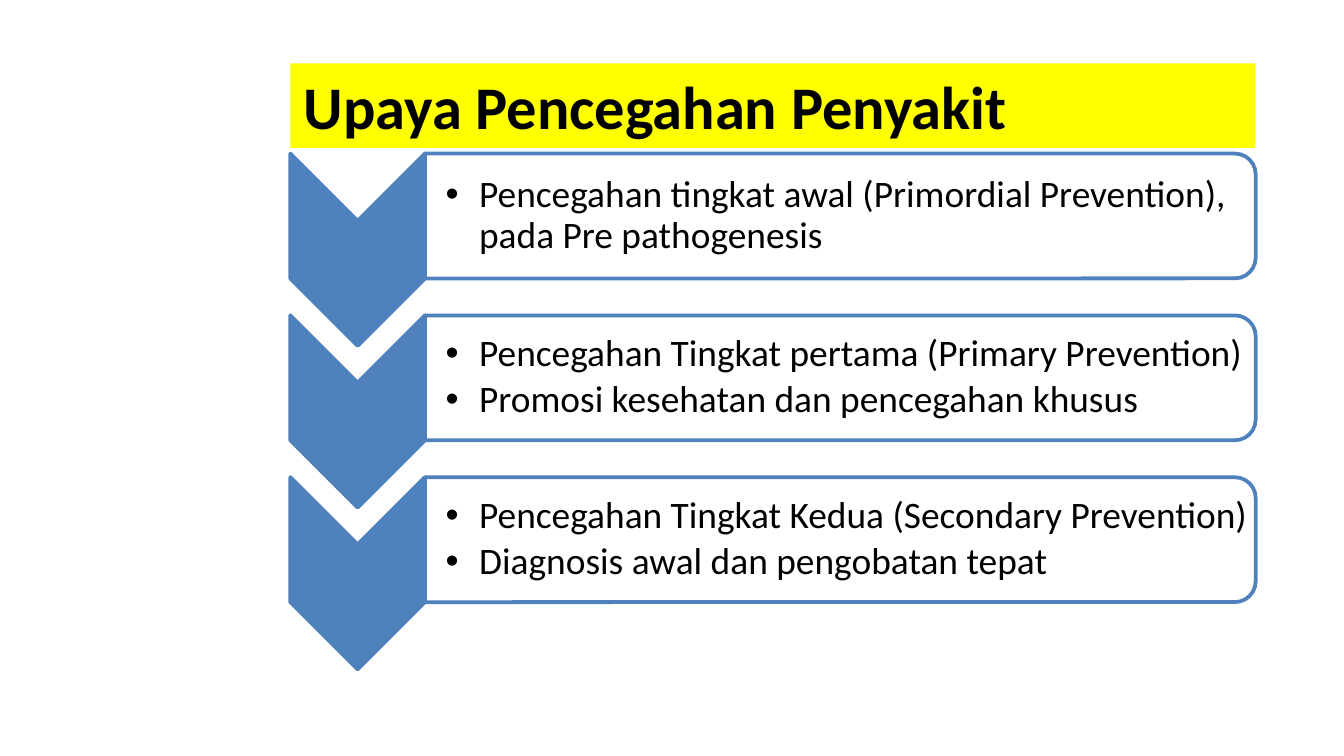
from dataclasses import dataclass

from lxml import etree
from pptx import Presentation
from pptx.dml.color import RGBColor
from pptx.enum.shapes import MSO_SHAPE
from pptx.enum.text import MSO_ANCHOR, MSO_AUTO_SIZE, PP_ALIGN
from pptx.oxml.ns import qn
from pptx.util import Pt

CHEVRON = MSO_SHAPE.CHEVRON
PANEL = MSO_SHAPE.ROUND_2_SAME_RECTANGLE
MIDDLE = MSO_ANCHOR.MIDDLE
LEFT = PP_ALIGN.LEFT
NO_AUTOFIT = MSO_AUTO_SIZE.NONE

COLORS = {"blue": "4F81BD", "white": "FFFFFF", "yellow": "FFFF00", "black": "000000"}
FONT = "Calibri"
FIRST_CENTER = 115.75
STEP_PITCH = 86.7
CHEVRON_DROP = 18


@dataclass
class Step:
    points: list[str]


STEPS = [
    Step(["Pencegahan tingkat awal (Primordial Prevention), pada Pre pathogenesis"]),
    Step(["Pencegahan Tingkat pertama (Primary Prevention)",
          "Promosi kesehatan dan pencegahan khusus"]),
    Step(["Pencegahan Tingkat Kedua (Secondary Prevention)",
          "Diagnosis awal dan pengobatan tepat"]),
]


def color(name: str) -> RGBColor:
    return RGBColor.from_string(COLORS[name])


def style_span(span, size: float, bold: bool = False) -> None:
    span.font.name = FONT
    span.font.size = Pt(size)
    span.font.bold = bold
    span.font.color.rgb = color("black")


def add_turned_shape(slide, kind, center_x: float, center_y: float,
                     width: float, height: float, fill: str):
    """Add a shape turned by 90 degrees; width and height are before the turn."""
    shape = slide.shapes.add_shape(kind, Pt(center_x - width / 2), Pt(center_y - height / 2),
                                   Pt(width), Pt(height))
    shape.rotation = 90
    shape.shadow.inherit = False
    shape.fill.solid()
    shape.fill.fore_color.rgb = color(fill)
    shape.line.color.rgb = color("blue")
    shape.line.width = Pt(2)
    return shape


def set_opacity(shape, percent: int) -> None:
    fill_color = shape.fill._xPr.find(qn("a:solidFill"))[0]
    etree.SubElement(fill_color, qn("a:alpha"), val=str(percent * 1000))


def add_bullet(para) -> None:
    properties = para._p.get_or_add_pPr()
    properties.set("marL", str(Pt(18)))
    properties.set("indent", str(Pt(-18)))
    etree.SubElement(properties, qn("a:buFont"), typeface="Arial")
    etree.SubElement(properties, qn("a:buChar"), char="•")


def add_points(slide, points: list[str], center_y: float) -> None:
    height = 59.8
    box = slide.shapes.add_textbox(Pt(227.5), Pt(center_y - height / 2), Pt(442.2), Pt(height))
    frame = box.text_frame
    frame.word_wrap = True
    frame.auto_size = NO_AUTOFIT
    frame.vertical_anchor = MIDDLE
    frame.margin_left = Pt(11.2)
    frame.margin_top = frame.margin_right = frame.margin_bottom = Pt(0.9)
    frame.text = "\n".join(points)
    for para in frame.paragraphs:
        para.level = 1
        para.alignment = LEFT
        para.line_spacing = 0.9
        para.space_after = Pt(3)
        add_bullet(para)
        style_span(para.runs[0], 20)


def add_step(slide, step: Step, center_y: float) -> None:
    add_turned_shape(slide, CHEVRON, 191.6, center_y + CHEVRON_DROP, 103, 72.1, "blue")
    panel = add_turned_shape(slide, PANEL, 450.2, center_y, 66.9, 445, "white")
    set_opacity(panel, 90)
    add_points(slide, step.points, center_y)


def add_title(slide) -> None:
    title = slide.shapes.title
    title.left, title.top, title.width, title.height = Pt(155.5), Pt(34), Pt(517), Pt(45.2)
    title.fill.solid()
    title.fill.fore_color.rgb = color("yellow")
    frame = title.text_frame
    frame.text = "Upaya Pencegahan Penyakit"
    frame.auto_size = NO_AUTOFIT
    frame.vertical_anchor = MIDDLE
    para = frame.paragraphs[0]
    para.alignment = LEFT
    style_span(para.runs[0], 32.4, bold=True)


def main() -> None:
    deck = Presentation()
    deck.slide_width, deck.slide_height = Pt(720), Pt(405)
    page = deck.slides.add_slide(deck.slide_layouts[5])
    add_title(page)
    for index, step in enumerate(STEPS):
        add_step(page, step, FIRST_CENTER + index * STEP_PITCH)
    deck.save("out.pptx")


if __name__ == "__main__":
    main()
